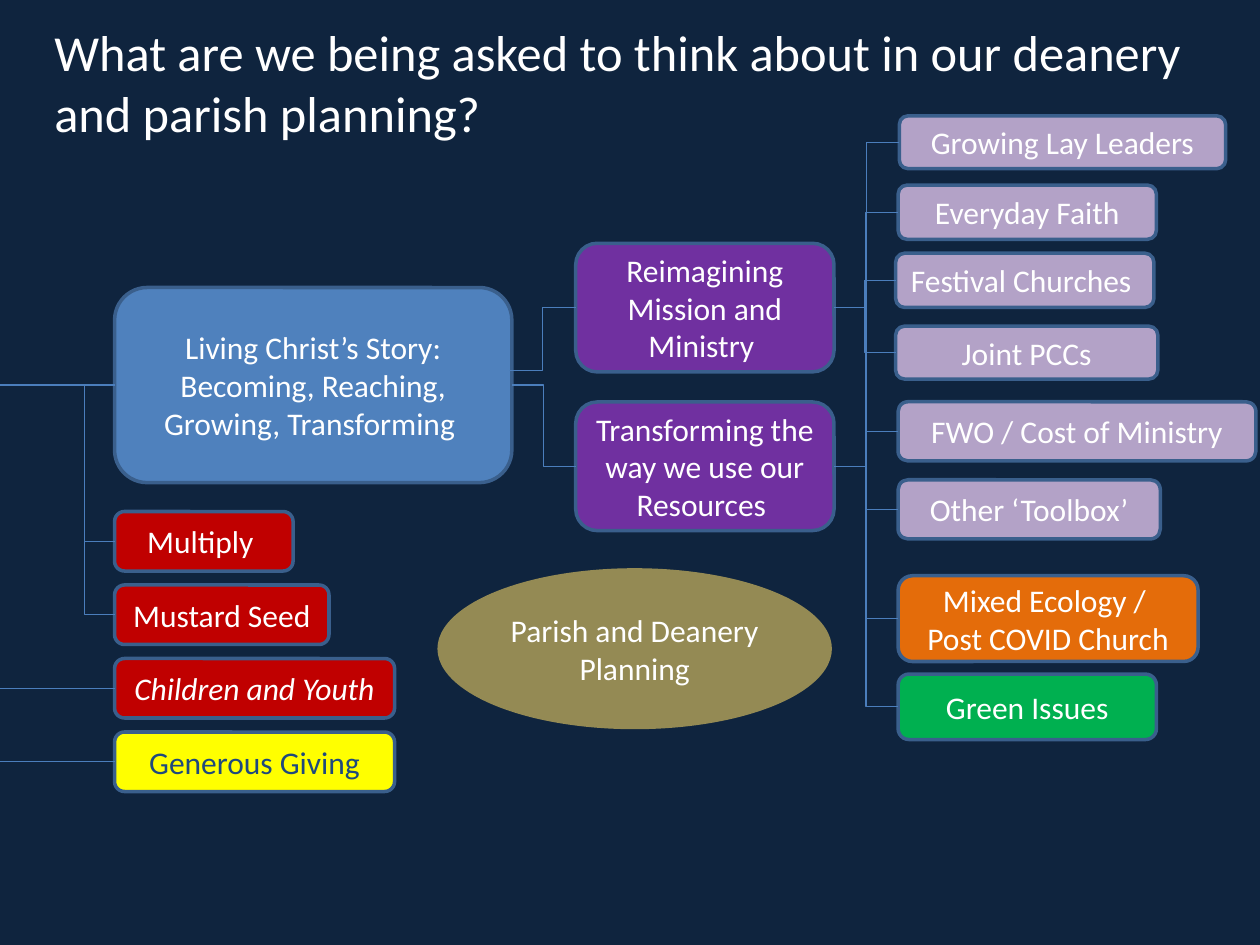
from lxml.etree import SubElement
from pptx import Presentation
from pptx.dml.color import RGBColor
from pptx.enum.shapes import MSO_CONNECTOR as Conn, MSO_SHAPE as Kind
from pptx.enum.text import MSO_ANCHOR as Anchor, PP_ALIGN as Align
from pptx.oxml.ns import qn
from pptx.util import Pt

NAVY = RGBColor(0x0F, 0x24, 0x3E)
WHITE = RGBColor(0xFF, 0xFF, 0xFF)
BLUE = RGBColor(0x4F, 0x81, 0xBD)
EDGE = RGBColor(0x3A, 0x5F, 0x8C)
WIRE = RGBColor(0x4B, 0x7E, 0xBC)
RED = RGBColor(0xC0, 0x00, 0x00)
YELLOW = RGBColor(0xFF, 0xFF, 0x00)
INK = RGBColor(0x1F, 0x49, 0x7D)
PURPLE = RGBColor(0x70, 0x30, 0xA0)
LILAC = RGBColor(0xB3, 0xA2, 0xC7)
OLIVE = RGBColor(0x94, 0x8A, 0x54)
ORANGE = RGBColor(0xE4, 0x6C, 0x0A)
GREEN = RGBColor(0x00, 0xB0, 0x50)
TOP, LEFT, BOTTOM, RIGHT = range(4)


def write(frame, text, size, color, align, italic=None):
    frame.word_wrap = True
    frame.vertical_anchor = Anchor.MIDDLE
    frame.text = text
    for para in frame.paragraphs:
        para.alignment = align
        for run in para.runs:
            font = run.font
            font.name, font.size, font.italic = "Calibri", Pt(size), italic
            font.color.rgb = color


def add_node(slide, box, text, fill, color=WHITE, italic=None,
             kind=Kind.ROUNDED_RECTANGLE, edge=EDGE):
    node = slide.shapes.add_shape(kind, *map(Pt, box))
    node.shadow.inherit = False
    node.fill.solid()
    node.fill.fore_color.rgb = fill
    if edge is None:
        node.line.fill.background()
    else:
        node.line.color.rgb = edge
        node.line.width = Pt(2)
    write(node.text_frame, text, 18, color, Align.CENTER, italic)
    return node


def add_wire(slide, kind, start, end):
    """Draw a connector between two points given in EMU."""
    wire = slide.shapes.add_connector(kind, *start, *end)
    wire.line.color.rgb = WIRE
    wire.line.width = Pt(0.75)
    SubElement(wire._element.spPr, qn("a:effectLst"))
    return wire


def left_mid(node):
    return node.left, node.top + node.height // 2


def right_mid(node):
    return node.left + node.width, node.top + node.height // 2


def link(slide, source, target):
    wire = add_wire(slide, Conn.ELBOW, right_mid(source), left_mid(target))
    wire.begin_connect(source, RIGHT)
    wire.end_connect(target, LEFT)


def add_title(slide, box):
    title = slide.shapes.add_textbox(*map(Pt, box))
    write(title.text_frame, "What are we being asked to think about in our "
          "deanery and parish planning?", 28.8, WHITE, Align.LEFT)


def add_story(slide, x, y):
    """Place the main story with its strands below, fed from the left edge."""
    story = add_node(slide, (x, y, 227, 111.5),
                     "Living Christ’s Story:\n"
                     "Becoming, Reaching, Growing, Transforming ", BLUE)
    rows = [("Multiply ", 102, RED, WHITE, None),
            ("Mustard Seed ", 122.5, RED, WHITE, None),
            ("Children and Youth", 160, RED, WHITE, True),
            ("Generous Giving", 160, YELLOW, INK, None)]
    strands = [add_node(slide, (x, y + 128 + 42 * i, wide, 34),
                        text, fill, color, italic)
               for i, (text, wide, fill, color, italic) in enumerate(rows)]
    for node in [story] + strands[2:]:
        end = left_mid(node)
        wire = add_wire(slide, Conn.STRAIGHT, (0, end[1]), end)
        wire.end_connect(node, LEFT)
    trunk = Pt(x - 17), left_mid(story)[1]
    for node in strands[:2]:
        wire = add_wire(slide, Conn.ELBOW, trunk, left_mid(node))
        guides = wire._element.spPr.find(qn("a:prstGeom")).find(qn("a:avLst"))
        SubElement(guides, qn("a:gd"), name="adj1", fmla="val 0")
    return story


def add_themes(slide, x, y, story):
    texts = ["Reimagining Mission and Ministry ",
             "Transforming the way we use our Resources "]
    themes = [add_node(slide, (x, y + 90.7 * i, 147.6, 73.5), text, PURPLE)
              for i, text in enumerate(texts)]
    add_wire(slide, Conn.ELBOW, (Pt(x - 38), Pt(y + 72.7)),
             left_mid(themes[0]))
    link(slide, story, themes[1])
    return themes


def add_topics(slide, x, y, themes):
    rows = [("Growing Lay Leaders", 0.7, 0, 186.5, 30.2, LILAC),
            ("Everyday Faith", 0, 39.6, 147.6, 31, LILAC),
            ("Festival Churches ", -1.4, 78.5, 147.6, 31, LILAC),
            ("Joint PCCs", -1.4, 120.2, 149.8, 30.2, LILAC),
            ("FWO / Cost of Ministry", 0, 163.4, 204.5, 33.8, LILAC),
            ("Other ‘Toolbox’", 0, 208, 149.8, 33.8, LILAC),
            ("Mixed Ecology / \nPost COVID Church", 0, 262.8, 171.4, 49,
             ORANGE),
            ("Green Issues", 0, 319, 147.6, 37.4, GREEN)]
    topics = [add_node(slide, (x + dx, y + dy, wide, high), text, fill)
              for text, dx, dy, wide, high, fill in rows]
    mission, resources = themes
    for topic in topics[:5]:
        link(slide, mission, topic)
    for topic in topics[4:]:
        link(slide, resources, topic)


def main():
    deck = Presentation()
    deck.slide_width, deck.slide_height = Pt(720), Pt(540)
    slide = deck.slides.add_slide(deck.slide_layouts[6])
    slide.background.fill.solid()
    slide.background.fill.fore_color.rgb = NAVY
    add_title(slide, (24, 13, 664, 67.7))
    story = add_story(slide, 65.5, 164.3)
    themes = add_themes(slide, 329, 139, story)
    add_node(slide, (250, 324.7, 225.4, 92), "Parish and Deanery Planning",
             OLIVE, kind=Kind.OVAL, edge=None)
    add_topics(slide, 513.2, 66.2, themes)
    deck.save("out.pptx")


if __name__ == "__main__":
    main()
